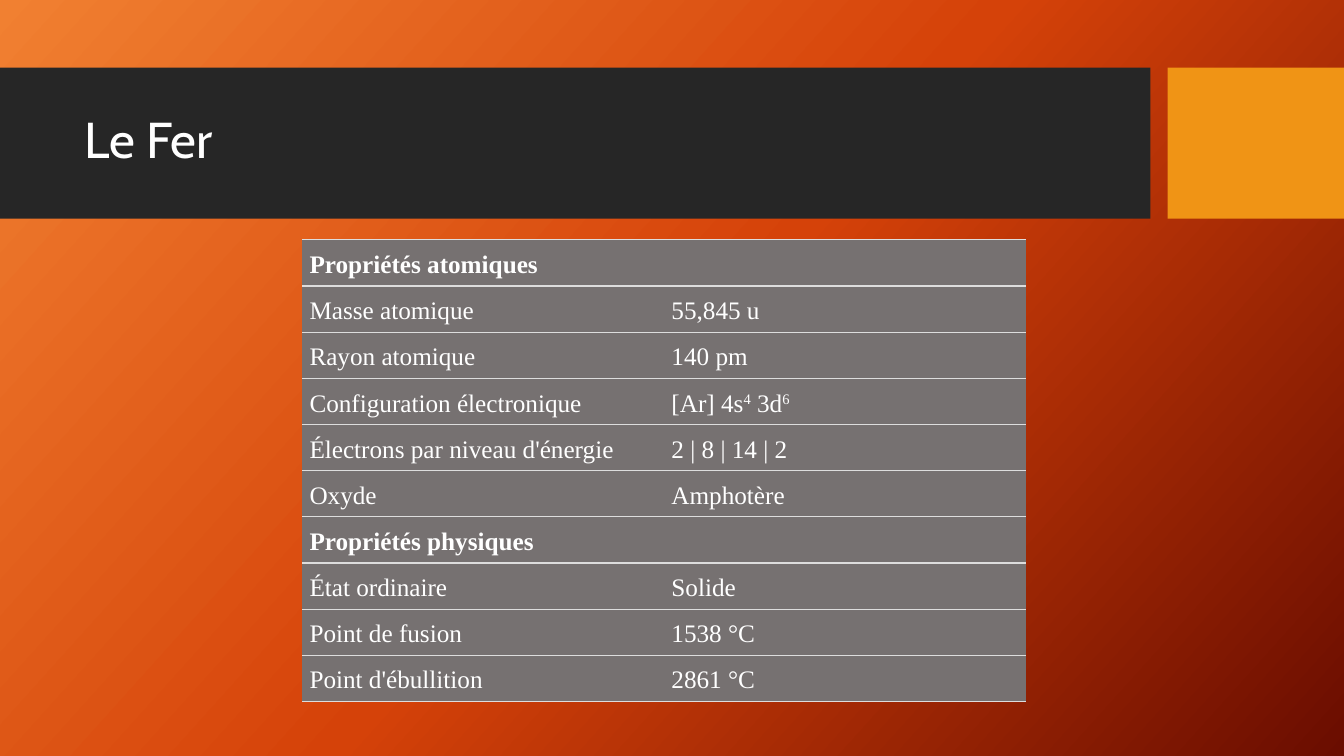
import copy

import lxml.etree
import pptx
import pptx.dml.color
import pptx.enum.shapes
import pptx.enum.text
import pptx.oxml.ns
import pptx.util

COLORS = {
    "band": "262626",
    "accent": "F09415",
    "text": "FFFFFF",
    "cell": "767171",
    "rule": "DDDDDD",
}
BACKGROUND_STOPS = [(0, "F18031"), (0.5, "D54209"), (1, "6A0D00")]
BACKGROUND_ANGLE = 42
TITLE_FONT = "Cabin"
TABLE_FONT = "Times New Roman"

SLIDE_WIDTH, SLIDE_HEIGHT = 13.33, 7.5
BAND_TOP, BAND_HEIGHT = 0.67, 1.5
BAND_WIDTH, ACCENT_LEFT = 11.41, 11.58
TABLE_LEFT, TABLE_TOP = 3, 2.38
COLUMN_WIDTH, ROW_HEIGHT = 3.59, 0.45
CELL_MARGIN = 0.07

# A row with a single entry is a section heading spanning both columns.
# A value is a list of runs; every second run is superscript.
PROPERTIES = [
    ("Propriétés atomiques",),
    ("Masse atomique", ["55,845 u"]),
    ("Rayon atomique", ["140 pm"]),
    ("Configuration électronique", ["[Ar] 4s", "4", " 3d", "6"]),
    ("Électrons par niveau d'énergie", ["2 | 8 | 14 | 2"]),
    ("Oxyde", ["Amphotère"]),
    ("Propriétés physiques",),
    ("État ordinaire", ["Solide"]),
    ("Point de fusion", ["1538 °C"]),
    ("Point d'ébullition", ["2861 °C"]),
]


def inches(*lengths):
    return [pptx.util.Inches(length) for length in lengths]


def rgb(name):
    return pptx.dml.color.RGBColor.from_string(COLORS[name])


def set_background(slide):
    fill = slide.background.fill
    fill.gradient()
    fill.gradient_angle = 360 - BACKGROUND_ANGLE
    stop_list = slide.element.find(".//" + pptx.oxml.ns.qn("a:gsLst"))
    stop_list.append(copy.deepcopy(stop_list[0]))
    for stop, (position, color) in zip(fill.gradient_stops, BACKGROUND_STOPS):
        stop.position = position
        stop.color.rgb = pptx.dml.color.RGBColor.from_string(color)


def add_block(slide, left, width, color):
    shape = slide.shapes.add_shape(
        pptx.enum.shapes.MSO_SHAPE.RECTANGLE,
        *inches(left, BAND_TOP, width, BAND_HEIGHT))
    shape.shadow.inherit = False
    shape.fill.solid()
    shape.fill.fore_color.rgb = rgb(color)
    shape.line.fill.background()


def add_run(paragraph, text, font_name, size, bold=False):
    run = paragraph.add_run()
    run.text = text
    run.font.name = font_name
    run.font.size = pptx.util.Pt(size)
    run.font.bold = bold
    run.font.color.rgb = rgb("text")
    return run


def set_title(slide, text):
    title = slide.shapes.title
    title.left, title.top, title.width, title.height = inches(0.74, 0.82, 10.51, 1.18)
    title.text_frame.vertical_anchor = pptx.enum.text.MSO_ANCHOR.MIDDLE
    paragraph = title.text_frame.paragraphs[0]
    paragraph.alignment = pptx.enum.text.PP_ALIGN.LEFT
    paragraph.line_spacing = 0.9
    add_run(paragraph, text, TITLE_FONT, 36)
    # The title belongs in front of the band drawn before it.
    slide.shapes.element.append(title.element)


def set_borders(cell):
    """Rule the cell above and below, and leave its sides open."""
    properties = cell._tc.get_or_add_tcPr()
    for side in ("L", "R", "T", "B"):
        line = lxml.etree.SubElement(properties, pptx.oxml.ns.qn("a:ln" + side))
        if side in "LR":
            lxml.etree.SubElement(line, pptx.oxml.ns.qn("a:noFill"))
            continue
        line.set("w", str(pptx.util.Pt(1)))
        fill = lxml.etree.SubElement(line, pptx.oxml.ns.qn("a:solidFill"))
        color = lxml.etree.SubElement(fill, pptx.oxml.ns.qn("a:srgbClr"))
        color.set("val", COLORS["rule"])


def format_cell(cell):
    set_borders(cell)
    cell.fill.solid()
    cell.fill.fore_color.rgb = rgb("cell")
    margin = pptx.util.Inches(CELL_MARGIN)
    cell.margin_left = cell.margin_right = margin
    cell.margin_top = cell.margin_bottom = margin


def write_cell(cell, runs, bold=False):
    paragraph = cell.text_frame.paragraphs[0]
    paragraph.line_spacing = 1.15
    for index, text in enumerate(runs):
        run = add_run(paragraph, text, TABLE_FONT, 18, bold)
        if index % 2:
            run.font._element.set("baseline", "30000")


def add_property_table(slide):
    row_count = len(PROPERTIES)
    table = slide.shapes.add_table(
        row_count, 2,
        *inches(TABLE_LEFT, TABLE_TOP, 2 * COLUMN_WIDTH, row_count * ROW_HEIGHT)).table
    table.first_row = False
    table.horz_banding = False
    for cell in table.iter_cells():
        format_cell(cell)
    for row, (label, *values) in enumerate(PROPERTIES):
        is_heading = not values
        if is_heading:
            table.cell(row, 0).merge(table.cell(row, 1))
        write_cell(table.cell(row, 0), [label], bold=is_heading)
        for runs in values:
            write_cell(table.cell(row, 1), runs)


def main():
    presentation = pptx.Presentation()
    presentation.slide_width, presentation.slide_height = inches(SLIDE_WIDTH, SLIDE_HEIGHT)
    slide = presentation.slides.add_slide(presentation.slide_layouts.get_by_name("Title Only"))
    set_background(slide)
    add_block(slide, 0, BAND_WIDTH, "band")
    add_block(slide, ACCENT_LEFT, SLIDE_WIDTH - ACCENT_LEFT, "accent")
    set_title(slide, "Le Fer")
    add_property_table(slide)
    presentation.save("out.pptx")


if __name__ == "__main__":
    main()
